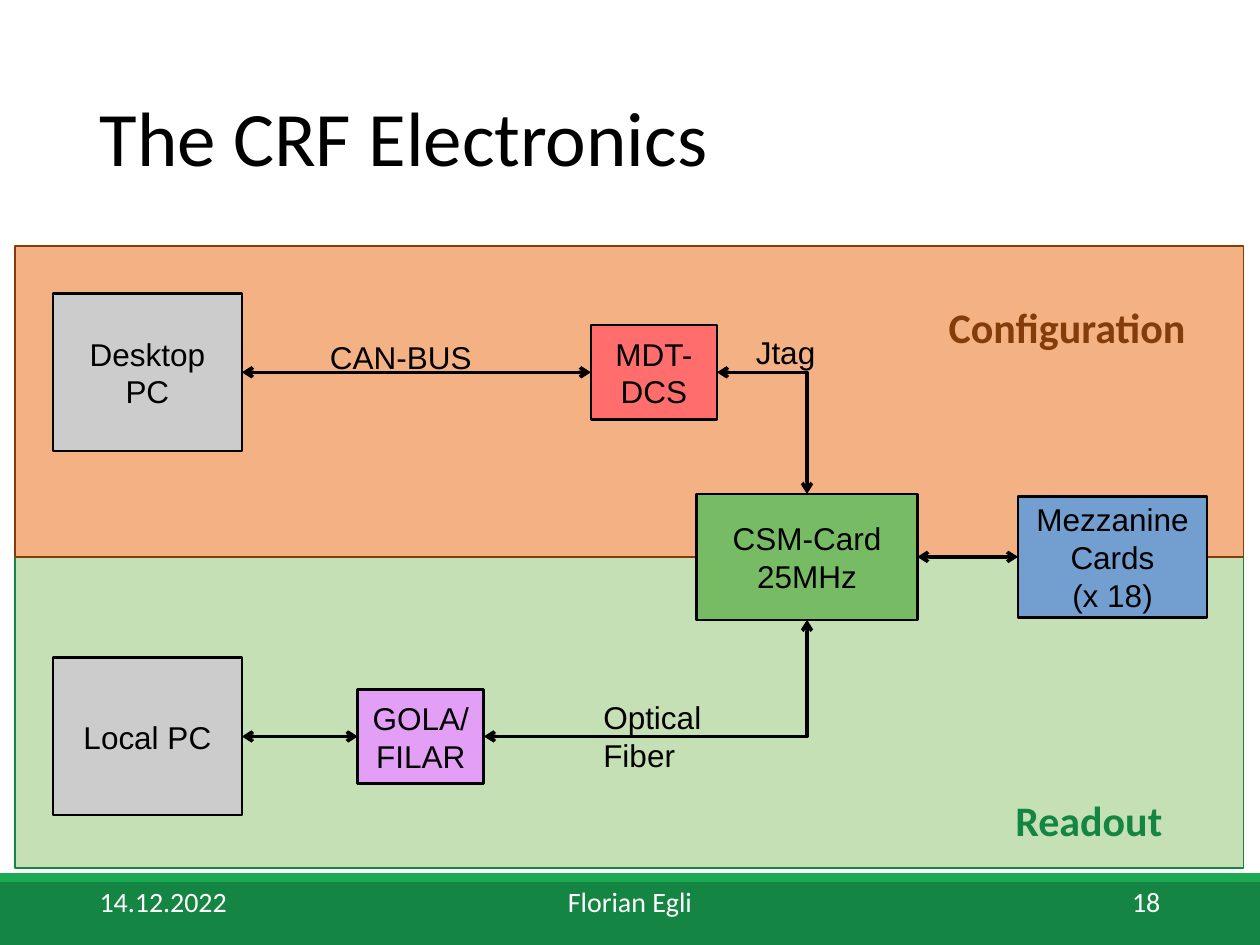
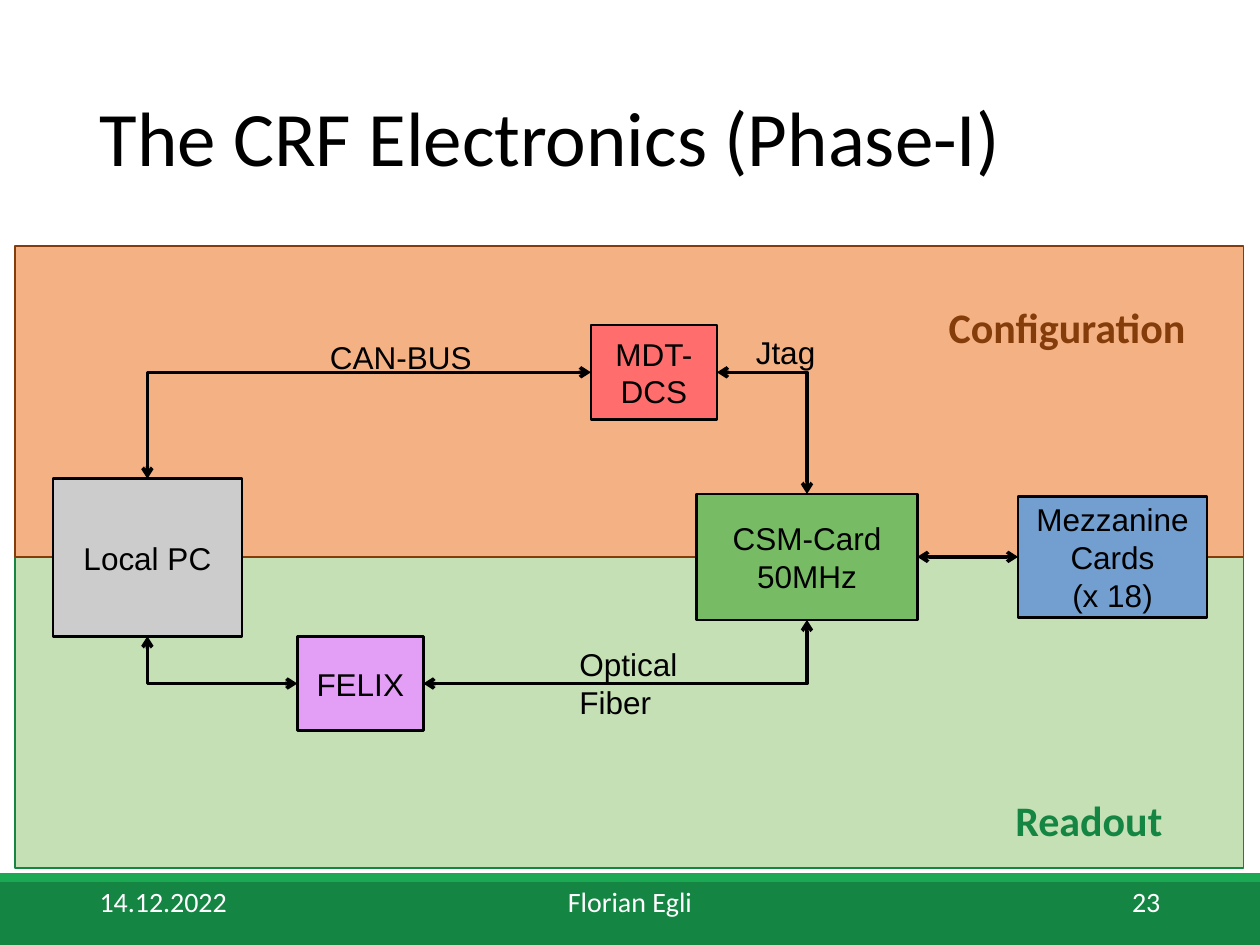
from copy import deepcopy

from lxml.etree import SubElement
from pptx import Presentation
from pptx.dml.color import RGBColor
from pptx.enum.shapes import MSO_CONNECTOR as Connector, MSO_SHAPE as Preset
from pptx.enum.text import MSO_ANCHOR as Anchor, MSO_AUTO_SIZE as AutoSize, PP_ALIGN as Align
from pptx.oxml.ns import qn
from pptx.util import Inches, Pt

COLORS = {
    "black": "000000", "white": "FFFFFF",
    "green": "158543", "light_green": "1BA954", "brown": "843C0B",
    "readout": "C5E0B4", "configuration": "F4B183",
    "computer": "CCCCCC", "control": "FF6D6D", "csm": "77BC65",
    "mezzanine": "729FCF", "link": "E39EF6",
}
TITLE_BOX = (0.69, 0.4, 8.62, 1.45)
BAND_BOX = (0, 6.93, 10, 0.57)
FOOTER_BOX = (0.69, 6.95, 8.62, 0.4)
BOARD_BOX = (0.12, 1.95, 9.75, 4.94)
TOP, LEFT, BOTTOM, RIGHT = range(4)


def rgb(name):
    """Return the named colour."""
    return RGBColor.from_string(COLORS[name])


def lengths(box):
    """Convert a box in inches to lengths."""
    return [Inches(value) for value in box]


def inside(box, left, top, width, height):
    """Return a box placed relative to another one."""
    return box[0] + left, box[1] + top, width, height


def write(shape, text, size, color="black", font="Arial", align=Align.LEFT, anchor=Anchor.TOP, bold=False):
    """Fill a shape with text in one format."""
    frame = shape.text_frame
    frame.text = text
    frame.word_wrap = True
    frame.auto_size = AutoSize.NONE
    frame.vertical_anchor = anchor
    for paragraph in frame.paragraphs:
        paragraph.alignment = align
        for run in paragraph.runs:
            run.font.size = Pt(size)
            run.font.name = font
            run.font.bold = bold
            run.font.color.rgb = rgb(color)


def move(shape, box):
    """Place a shape on the given box."""
    shape.left, shape.top, shape.width, shape.height = lengths(box)


def add_rectangle(slide, box, fill, line=None, width=1):
    """Add a flat rectangle."""
    shape = slide.shapes.add_shape(Preset.RECTANGLE, *lengths(box))
    shape.shadow.inherit = False
    shape.fill.solid()
    shape.fill.fore_color.rgb = rgb(fill)
    if line:
        shape.line.color.rgb = rgb(line)
        shape.line.width = Pt(width)
    else:
        shape.line.fill.background()
    return shape


def add_label(slide, box, text, size=18, **style):
    """Add a text box."""
    write(slide.shapes.add_textbox(*lengths(box)), text, size, **style)


def add_node(slide, box, text, fill):
    """Add a device box with centred text."""
    node = add_rectangle(slide, box, fill, "black", 1.5)
    write(node, text, 18, align=Align.CENTER, anchor=Anchor.MIDDLE)
    frame = node.text_frame
    frame.margin_left = frame.margin_right = Inches(0.11)
    frame.margin_top = frame.margin_bottom = Inches(0.06)
    return node


def add_link(slide, start, start_site, end, end_site):
    """Join two nodes by a double arrow, bent when it ends at a top or bottom side."""
    bent = end_site in (TOP, BOTTOM)
    kind = Connector.ELBOW if bent else Connector.STRAIGHT
    link = slide.shapes.add_connector(kind, 0, 0, 0, 0)
    link.begin_connect(start, start_site)
    link.end_connect(end, end_site)
    link.line.color.rgb = rgb("black")
    link.line.width = Pt(2)
    properties = link.element.spPr
    if bent:
        properties.find(qn("a:prstGeom")).set("prst", "bentConnector2")
    for tag in ("a:headEnd", "a:tailEnd"):
        SubElement(properties.find(qn("a:ln")), qn(tag), type="arrow")
    SubElement(properties, qn("a:effectLst"))


def add_master_band(slide, box):
    """Put the green footer band on the slide master."""
    left, top, width, height = box
    stripe = 0.07
    parts = [add_rectangle(slide, (left, top + stripe, width, height - stripe), "green"),
             add_rectangle(slide, (left, top, width, stripe), "light_green")]
    tree = slide.slide_layout.slide_master.element.cSld.spTree
    for index, part in enumerate(parts, 2):
        tree.insert(index, part.element)


def add_title(slide, box, text):
    """Fill and place the title placeholder."""
    title = slide.shapes.title
    move(title, box)
    write(title, text, 44, font="Calibri", anchor=Anchor.MIDDLE)
    title.text_frame.paragraphs[0].line_spacing = 0.9


def add_footer(slide, box, number):
    """Fill the date, author and number placeholders."""
    fields = [("14.12.2022", 0, 2.25, Align.LEFT),
              ("Florian Egli", 2.62, 3.38, Align.CENTER),
              (number, 6.37, 2.25, Align.RIGHT)]
    sources = [item for item in slide.slide_layout.placeholders if item.placeholder_format.idx >= 10]
    for source, (text, left, width, align) in zip(sources, fields):
        slide.element.cSld.spTree.append(deepcopy(source.element))
        field = slide.shapes[-1]
        move(field, inside(box, left, 0, width, box[3]))
        write(field, text, 16, "white", "Calibri", align, Anchor.MIDDLE)


def add_zone(slide, box, caption, fill, line, caption_place):
    """Add a coloured half of the board with its caption."""
    add_rectangle(slide, box, fill, line)
    add_label(slide, inside(box, *caption_place, 0.5), caption, 24, color=line, font="Calibri", bold=True)


def add_board(slide, box, frequency):
    """Add both zones and the devices every setup has; return the devices."""
    left, top, width, height = box
    half = height / 2
    add_zone(slide, (left, top + half, width, half), "Readout", "readout", "green", (7.84, 1.84, 1.7))
    add_zone(slide, (left, top, width, half), "Configuration", "configuration", "brown", (7.31, 0.39, 2.25))
    control = add_node(slide, inside(box, 4.57, 0.63, 1, 0.75), "MDT-DCS", "control")
    csm = add_node(slide, inside(box, 5.41, 1.97, 1.75, 1), f"CSM-Card\n{frequency}", "csm")
    mezzanine = add_node(slide, inside(box, 7.96, 1.99, 1.5, 0.96), "Mezzanine Cards\n(x 18)", "mezzanine")
    add_link(slide, control, RIGHT, csm, TOP)
    add_link(slide, csm, RIGHT, mezzanine, LEFT)
    add_label(slide, inside(box, 2.4, 0.68, 1.75, 0.39), "CAN-BUS")
    add_label(slide, inside(box, 5.78, 0.64, 0.75, 0.38), "Jtag")
    return control, csm


def add_computer(slide, box, top, text):
    """Add a computer at the left side of the board."""
    return add_node(slide, inside(box, 0.3, top, 1.5, 1.25), text, "computer")


def add_optics(slide, box, left, top, text, label_left, csm):
    """Add the optical receiver, its fiber to the CSM and the fiber label."""
    receiver = add_node(slide, inside(box, left, top, 1, 0.75), text, "link")
    add_link(slide, receiver, RIGHT, csm, BOTTOM)
    add_label(slide, inside(box, label_left, top + 0.02, 1.5, 0.66), "Optical Fiber")
    return receiver


def add_two_computer_setup(slide, box):
    """Draw the setup with separate control and readout computers."""
    control, csm = add_board(slide, box, "25MHz")
    desktop = add_computer(slide, box, 0.38, "Desktop PC")
    local = add_computer(slide, box, 3.27, "Local PC")
    receiver = add_optics(slide, box, 2.72, 3.52, "GOLA/FILAR", 4.57, csm)
    add_link(slide, desktop, RIGHT, control, LEFT)
    add_link(slide, local, RIGHT, receiver, LEFT)


def add_one_computer_setup(slide, box):
    """Draw the setup with one computer for control and readout."""
    control, csm = add_board(slide, box, "50MHz")
    local = add_computer(slide, box, 1.85, "Local PC")
    receiver = add_optics(slide, box, 2.24, 3.1, "FELIX", 4.38, csm)
    add_link(slide, control, LEFT, local, TOP)
    add_link(slide, receiver, LEFT, local, BOTTOM)


def main():
    """Build and save the presentation."""
    presentation = Presentation()
    presentation.slide_width, presentation.slide_height = Inches(10), Inches(7.5)
    pages = [("The CRF Electronics", "18", add_two_computer_setup),
             ("The CRF Electronics (Phase-I)", "23", add_one_computer_setup)]
    for index, (title, number, add_setup) in enumerate(pages):
        slide = presentation.slides.add_slide(presentation.slide_layouts[5])
        if index == 0:
            add_master_band(slide, BAND_BOX)
        add_title(slide, TITLE_BOX, title)
        add_footer(slide, FOOTER_BOX, number)
        add_setup(slide, BOARD_BOX)
    presentation.save("out.pptx")


if __name__ == "__main__":
    main()
